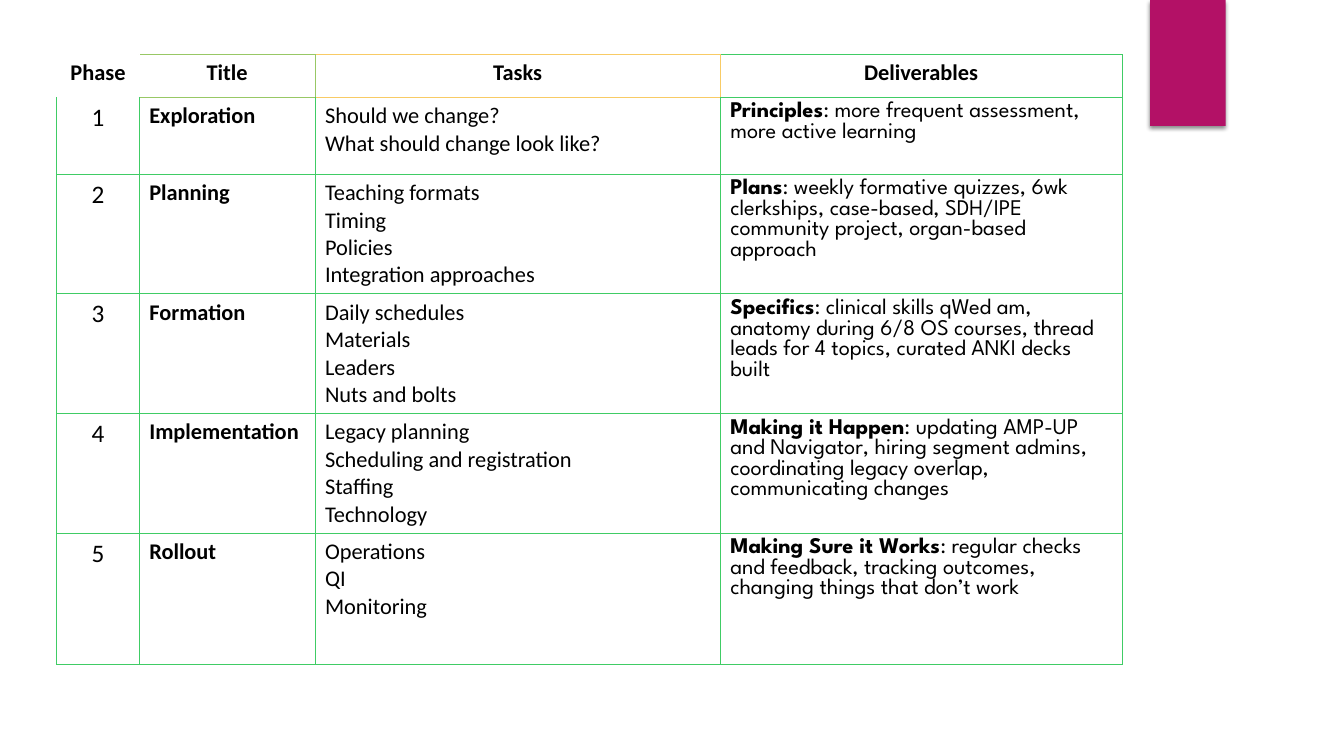
from dataclasses import dataclass

from lxml.etree import SubElement
from pptx import Presentation
from pptx.dml.color import RGBColor
from pptx.enum.shapes import MSO_SHAPE
from pptx.enum.text import PP_ALIGN
from pptx.oxml import parse_xml
from pptx.oxml.ns import nsdecls, qn
from pptx.util import Pt


@dataclass(frozen=True)
class Theme:
    text: str = "000000"
    paper: str = "FFFFFF"
    accent: str = "B31166"
    grid: str = "40CC65"
    header_lines: tuple = ("FFFFFF", "98C865", "F8CB65", "40CC65")
    main_font: str = "Calibri"
    deliverable_font: str = "League Spartan"
    text_size: int = 16
    number_size: int = 18


theme = Theme()

HEADERS = ["Phase", "Title", "Tasks", "Deliverables"]
PHASES = [
    ("Exploration",
     ["Should we change?", "What should change look like?"],
     "Principles", ": more frequent assessment, more active learning"),
    ("Planning",
     ["Teaching formats", "Timing", "Policies", "Integration approaches"],
     "Plans", ": weekly formative quizzes, 6wk clerkships, case-based, "
     "SDH/IPE community project, organ-based approach"),
    ("Formation",
     ["Daily schedules", "Materials", "Leaders", "Nuts and bolts"],
     "Specifics", ": clinical skills qWed am, anatomy during 6/8 OS courses, "
     "thread leads for 4 topics, curated ANKI decks built"),
    ("Implementation",
     ["Legacy planning", "Scheduling and registration", "Staffing", "Technology"],
     "Making it Happen", ": updating AMP-UP and Navigator, hiring segment admins, "
     "coordinating legacy overlap, communicating changes"),
    ("Rollout",
     ["Operations", "QI", "Monitoring"],
     "Making Sure it Works", ": regular checks and feedback, tracking outcomes, "
     "changing things that don’t work"),
]
COLUMN_WIDTHS = [59, 125.5, 289.5, 287]
ROW_HEIGHTS = [30.5, 55, 81.5, 81.5, 81.5, 94]
NO_STYLE = "{2D5ABB26-0587-4C30-8999-92F81FD0307C}"


def write_cell(cell, paragraphs, font_name=theme.main_font, size=theme.text_size,
               bold=False, align=PP_ALIGN.LEFT):
    """Each paragraph is a list of (text, bold) runs or a plain string."""
    frame = cell.text_frame
    for index, content in enumerate(paragraphs):
        para = frame.add_paragraph() if index else frame.paragraphs[0]
        para.alignment = align
        para.font.name = font_name
        para.font.size = Pt(size)
        para.font.bold = bold
        para.font.color.rgb = RGBColor.from_string(theme.text)
        runs = [(content, bold)] if isinstance(content, str) else content
        for text, run_bold in runs:
            span = para.add_run()
            span.text = text
            if run_bold != bold:
                span.font.bold = run_bold


def style_cell(cell, left, right, top, bottom):
    """Draw the four borders, then fill the cell."""
    properties = cell._tc.get_or_add_tcPr()
    for tag, color in (("a:lnL", left), ("a:lnR", right), ("a:lnT", top), ("a:lnB", bottom)):
        line = SubElement(properties, qn(tag), w=str(Pt(0.75)))
        fill = SubElement(line, qn("a:solidFill"))
        SubElement(fill, qn("a:srgbClr"), val=color)
    cell.fill.solid()
    cell.fill.fore_color.rgb = RGBColor.from_string(theme.paper)


# Slide
deck = Presentation()
deck.slide_width, deck.slide_height = Pt(960), Pt(540)
page = deck.slides.add_slide(deck.slide_layouts[6])

# Accent tab at the top edge
tab = page.shapes.add_shape(MSO_SHAPE.RECTANGLE, Pt(821.5), Pt(0), Pt(54), Pt(90))
tab.fill.solid()
tab.fill.fore_color.rgb = RGBColor.from_string(theme.accent)
tab.line.fill.background()
tab.shadow.inherit = False
tab._element.spPr.find(qn("a:effectLst")).append(parse_xml(
    f'<a:outerShdw {nsdecls("a")} blurRad="{Pt(3)}" dist="{Pt(2)}" dir="5400000" '
    f'rotWithShape="0"><a:srgbClr val="{theme.text}"><a:alpha val="45000"/></a:srgbClr>'
    '</a:outerShdw>'))

# Phase table
frame = page.shapes.add_table(len(ROW_HEIGHTS), len(COLUMN_WIDTHS), Pt(40.5), Pt(39),
                              Pt(sum(COLUMN_WIDTHS)), Pt(sum(ROW_HEIGHTS)))
table = frame.table
table.first_row = False
table.horz_banding = False
table._tbl.tblPr.find(qn("a:tableStyleId")).text = NO_STYLE
for column, width in zip(table.columns, COLUMN_WIDTHS):
    column.width = Pt(width)
for row, height in zip(table.rows, ROW_HEIGHTS):
    row.height = Pt(height)

# Header row: each column has its own line colour
for index, (header, color) in enumerate(zip(HEADERS, theme.header_lines)):
    cell = table.cell(0, index)
    write_cell(cell, [header], bold=True, align=PP_ALIGN.CENTER)
    style_cell(cell, theme.header_lines[max(index - 1, 0)], color, color, color)

# Phase rows
for number, (title, tasks, lead, details) in enumerate(PHASES, start=1):
    phase_cell, title_cell, tasks_cell, deliverable_cell = table.rows[number].cells
    write_cell(phase_cell, [str(number)], size=theme.number_size, align=PP_ALIGN.CENTER)
    write_cell(title_cell, [title], bold=True)
    write_cell(tasks_cell, tasks)
    write_cell(deliverable_cell, [[(lead, True), (details, False)]],
               font_name=theme.deliverable_font)
    for cell, header_line in zip(table.rows[number].cells, theme.header_lines):
        top = header_line if number == 1 else theme.grid
        style_cell(cell, theme.grid, theme.grid, top, theme.grid)

deck.save("out.pptx")
